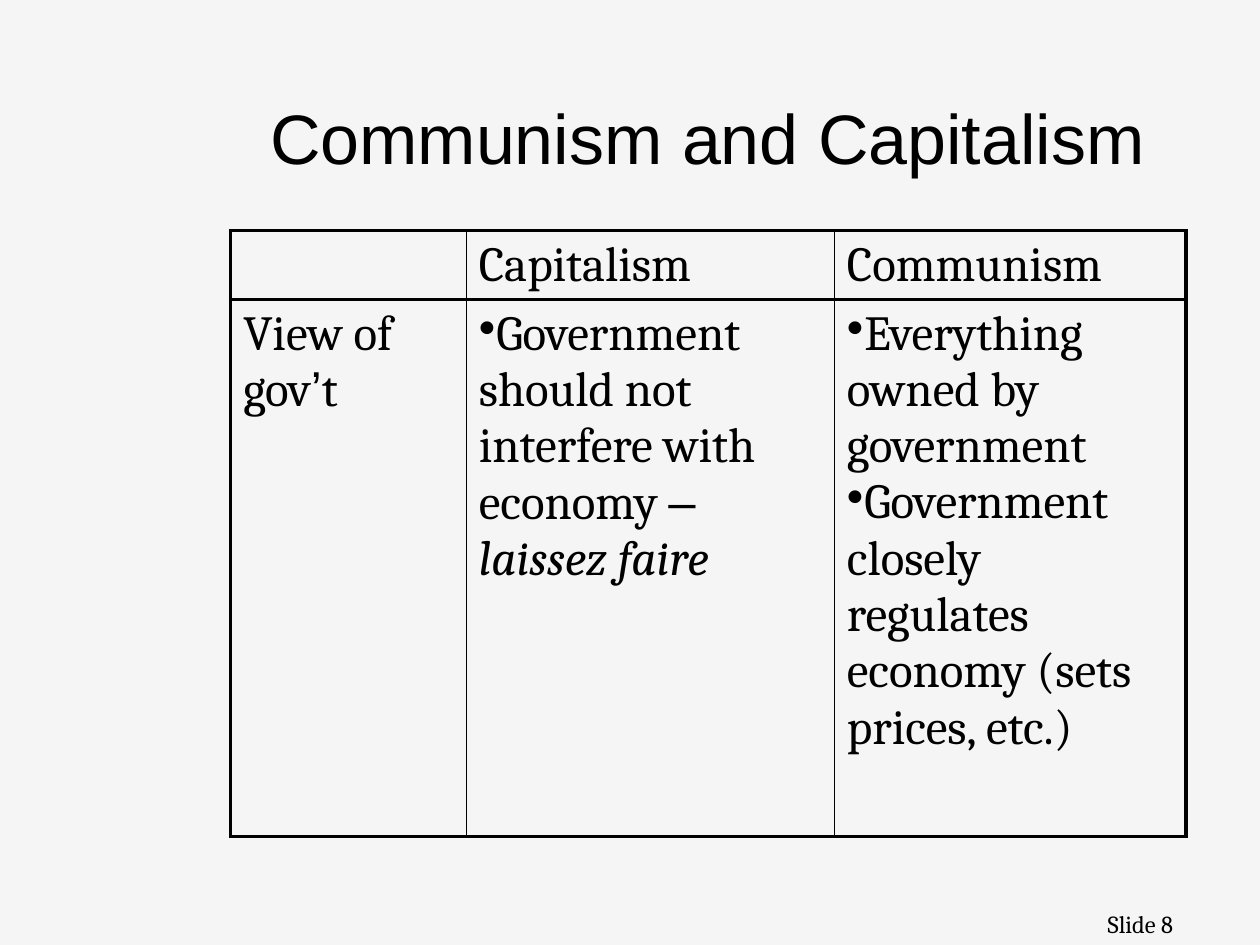
import pptx
import pptx.dml.color
import pptx.enum.text
import pptx.oxml
import pptx.oxml.ns
import pptx.util

Cm = pptx.util.Cm
Pt = pptx.util.Pt
ALIGN = pptx.enum.text.PP_ALIGN
ANCHOR = pptx.enum.text.MSO_ANCHOR

# Content: each cell is a list of paragraphs, each paragraph a list of (text, font, italic)
INK, BACKGROUND = "000000", "F5F5F5"
HEADING_FONT, BODY_FONT = "Arial", "Cambria"
TITLE = "Communism and Capitalism"
SLIDE_LABEL = "Slide 8"


def body(text):
    return [(text, BODY_FONT, False)]


ROWS = [
    [[], [body("Capitalism")], [body("Communism")]],
    [
        [[("View of gov", BODY_FONT, False), ("’", HEADING_FONT, False), ("t", BODY_FONT, False)]],
        [[("Government should not interfere with economy ", BODY_FONT, False),
          ("– ", HEADING_FONT, False), ("laissez faire", BODY_FONT, True)]],
        [body("Everything owned by government"),
         body("Government closely regulates economy (sets prices, etc.)")],
    ],
]
COLUMN_WIDTHS = [4.75, 7.42, 7.09]
ROW_HEIGHTS = [1.24, 10.82]
THICK, THIN = 2.25, 1


def color(value):
    return pptx.dml.color.RGBColor.from_string(value)


def add_run(paragraph, text, font, size, italic=False):
    run = paragraph.add_run()
    run.text = text
    run.font.name = font
    run.font.size = Pt(size)
    run.font.italic = italic
    run.font.color.rgb = color(INK)


def add_bullet(paragraph):
    properties = paragraph._p.get_or_add_pPr()
    properties.append(pptx.oxml.parse_xml(
        f'<a:buChar {pptx.oxml.ns.nsdecls("a")} char="•"/>'))


def add_border(cell, side, width):
    cell._tc.get_or_add_tcPr().append(pptx.oxml.parse_xml(
        f'<a:ln{side} {pptx.oxml.ns.nsdecls("a")} w="{Pt(width)}">'
        f'<a:solidFill><a:srgbClr val="{INK}"/></a:solidFill></a:ln{side}>'))


presentation = pptx.Presentation()
presentation.slide_width, presentation.slide_height = Cm(25.4), Cm(19.05)
slide = presentation.slides.add_slide(presentation.slide_layouts[5])
slide.background.fill.solid()
slide.background.fill.fore_color.rgb = color(BACKGROUND)

# Title
title = slide.shapes.title
title.left, title.top, title.width, title.height = Cm(4.52), Cm(1.17), Cm(19.48), Cm(3.18)
title.text_frame.vertical_anchor = ANCHOR.MIDDLE
title_paragraph = title.text_frame.paragraphs[0]
title_paragraph.alignment = ALIGN.CENTER
add_run(title_paragraph, TITLE, HEADING_FONT, 40)

# Comparison table
table = slide.shapes.add_table(
    len(ROWS), len(COLUMN_WIDTHS), Cm(4.65), Cm(4.65),
    Cm(sum(COLUMN_WIDTHS)), Cm(sum(ROW_HEIGHTS))).table
table.first_row = table.horz_banding = False
for column, width in zip(table.columns, COLUMN_WIDTHS):
    column.width = Cm(width)
for row, height in zip(table.rows, ROW_HEIGHTS):
    row.height = Cm(height)

last_column = len(COLUMN_WIDTHS) - 1
for row_index, row in enumerate(ROWS):
    for column_index, paragraphs in enumerate(row):
        cell = table.cell(row_index, column_index)
        add_border(cell, "L", THICK if column_index == 0 else THIN)
        add_border(cell, "R", THICK if column_index == last_column else THIN)
        add_border(cell, "T", THICK)
        add_border(cell, "B", THICK)
        cell.fill.background()
        for index, runs in enumerate(paragraphs):
            frame = cell.text_frame
            paragraph = frame.add_paragraph() if index else frame.paragraphs[0]
            if row_index and column_index:
                add_bullet(paragraph)
            for text, font, italic in runs:
                add_run(paragraph, text, font, 28, italic)

# Slide label
label = slide.shapes.add_textbox(Cm(18.62), Cm(18.21), Cm(5.28), Cm(1.27))
label.text_frame.word_wrap = True
label_paragraph = label.text_frame.paragraphs[0]
label_paragraph.alignment = ALIGN.RIGHT
add_run(label_paragraph, SLIDE_LABEL, BODY_FONT, 14)

presentation.save("out.pptx")
